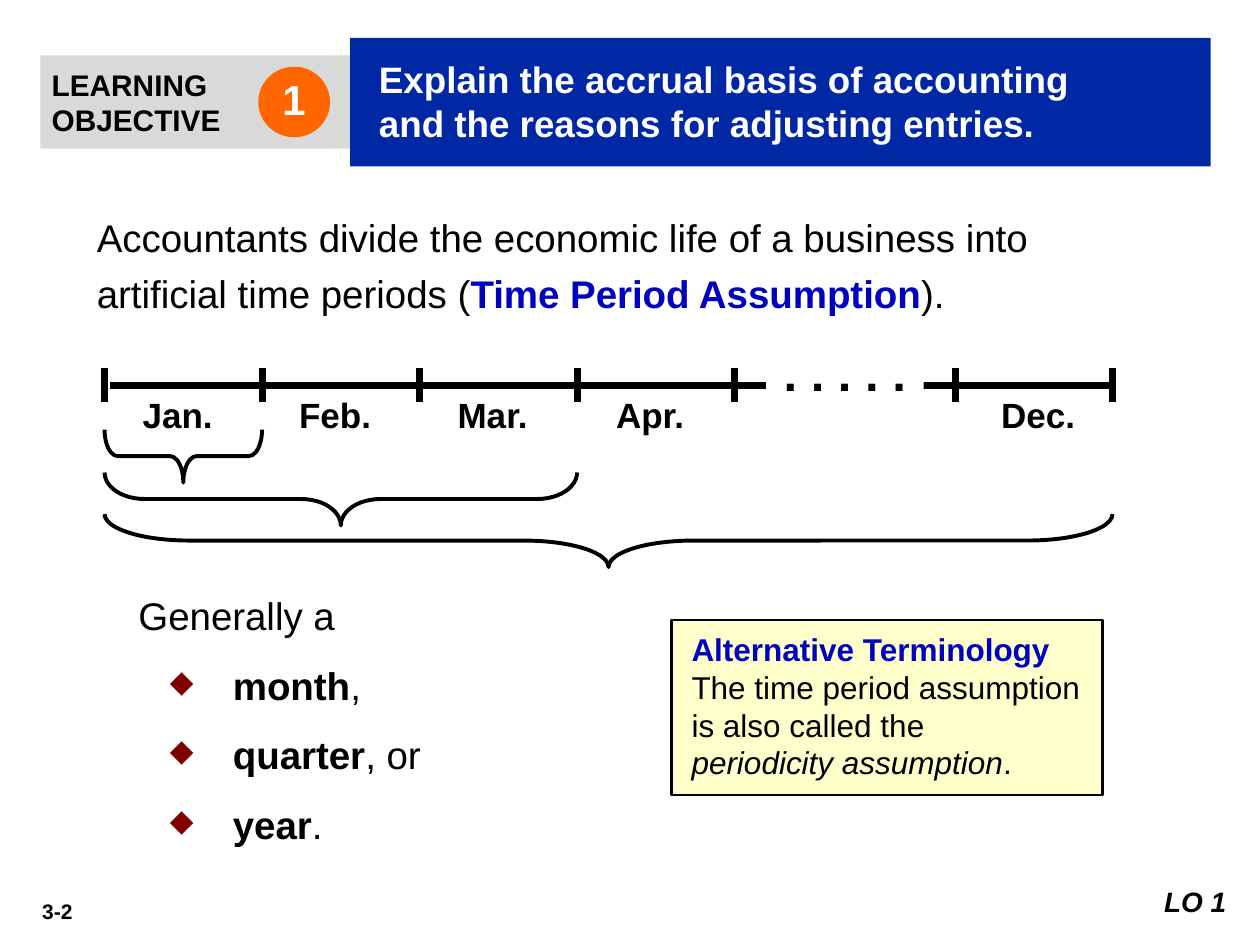
"""Build a slide on the time period assumption with a divided year timeline."""
from dataclasses import dataclass

from lxml import etree
from pptx import Presentation
from pptx.dml.color import RGBColor
from pptx.enum.shapes import MSO_CONNECTOR, MSO_SHAPE
from pptx.enum.text import MSO_ANCHOR, PP_ALIGN
from pptx.oxml.ns import qn
from pptx.util import Emu, Pt

RECT, OVAL, BRACE = MSO_SHAPE.RECTANGLE, MSO_SHAPE.OVAL, MSO_SHAPE.LEFT_BRACE
STRAIGHT = MSO_CONNECTOR.STRAIGHT
LEFT, CENTER, RIGHT = PP_ALIGN.LEFT, PP_ALIGN.CENTER, PP_ALIGN.RIGHT
TOP, MIDDLE = MSO_ANCHOR.TOP, MSO_ANCHOR.MIDDLE
EMU_PER_PX = 9144
BLACK, WHITE, BLUE = "000000", "FFFFFF", "0000BF"
START, MONTH = 83, 125


@dataclass(frozen=True)
class Span:
    text: str
    bold: bool = False
    italic: bool = False
    color: str = BLACK


@dataclass(frozen=True)
class Para:
    spans: tuple[Span, ...]
    bullet: bool = False


@dataclass(frozen=True)
class Style:
    size: int
    align: PP_ALIGN = LEFT
    anchor: MSO_ANCHOR = TOP
    wrap: bool = True
    line_spacing: float = 1.0
    gap: int = 0
    margin: int = 0
    insets: tuple[int, int, int, int] = (10, 5, 10, 5)


@dataclass(frozen=True)
class Box:
    left: int
    top: int
    width: int
    height: int
    paras: tuple[Para, ...]
    style: Style
    fill: str | None = None
    line: str | None = None
    shape: MSO_SHAPE = RECT


def px(length: float) -> Emu:
    return Emu(round(length * EMU_PER_PX))


def rgb(color: str) -> RGBColor:
    return RGBColor.from_string(color)


def plain(*lines: str, bold: bool = True, italic: bool = False, color: str = BLACK) -> tuple[Para, ...]:
    return tuple(Para((Span(line, bold, italic, color),)) for line in lines)


def add_bullet(para) -> None:
    properties = para._p.get_or_add_pPr()
    properties.set("marL", str(px(75)))
    properties.set("indent", str(px(-50)))
    color = etree.SubElement(properties, qn("a:buClr"))
    etree.SubElement(color, qn("a:srgbClr"), val="800000")
    etree.SubElement(properties, qn("a:buSzPct"), val="80000")
    etree.SubElement(properties, qn("a:buChar"), char="◆")


def write_text(frame, paras: tuple[Para, ...], style: Style) -> None:
    frame.word_wrap = style.wrap
    frame.vertical_anchor = style.anchor
    frame.margin_left, frame.margin_top, frame.margin_right, frame.margin_bottom = map(px, style.insets)
    for index, item in enumerate(paras):
        para = frame.add_paragraph() if index else frame.paragraphs[0]
        para.alignment = style.align
        para.line_spacing = style.line_spacing
        para.space_before = Pt(style.gap if index else 0)
        if style.margin:
            para._p.get_or_add_pPr().set("marL", str(px(style.margin)))
        if item.bullet:
            add_bullet(para)
        for part in item.spans:
            span = para.add_run()
            span.text = part.text
            font = span.font
            font.name, font.size = "Arial", Pt(style.size)
            font.bold, font.italic = part.bold, part.italic
            font.color.rgb = rgb(part.color)


def draw_box(page, box: Box) -> None:
    place = [px(value) for value in (box.left, box.top, box.width, box.height)]
    if box.fill is None:
        shape = page.shapes.add_textbox(*place)
    else:
        shape = page.shapes.add_shape(box.shape, *place)
        shape.shadow.inherit = False
        shape.fill.solid()
        shape.fill.fore_color.rgb = rgb(box.fill)
        if box.line is None:
            shape.line.fill.background()
        else:
            shape.line.color.rgb = rgb(box.line)
            shape.line.width = Pt(1.5)
    write_text(shape.text_frame, box.paras, box.style)


def draw_line(page, x1: int, y1: int, x2: int, y2: int) -> None:
    line = page.shapes.add_connector(STRAIGHT, px(x1), px(y1), px(x2), px(y2))
    line.line.color.rgb = rgb(BLACK)
    line.line.width = Pt(4)
    etree.SubElement(line._element.spPr, qn("a:effectLst"))


def draw_brace(page, top: int, span: int, depth: int = 42) -> None:
    left = START + (span - depth) / 2
    brace = page.shapes.add_shape(BRACE, px(left), px(top - (span - depth) / 2), px(depth), px(span))
    brace.rotation = 270
    brace.adjustments[0] = span / 500
    brace.shadow.inherit = False
    brace.fill.background()
    brace.line.color.rgb = rgb(BLACK)
    brace.line.width = Pt(2.25)


def draw_timeline(page) -> None:
    draw_line(page, 87, 306, 883, 306)
    draw_box(page, Box(608, 292, 125, 33, plain(". . . . ."),
                       Style(28, CENTER, MIDDLE, wrap=False, line_spacing=0.15), WHITE))
    for x in [START + MONTH * index for index in range(5)] + [758, 883]:
        draw_line(page, x, 292, x, 319)
    lefts = [99 + MONTH * index for index in range(4)] + [782]
    for left, month in zip(lefts, ("Jan.", "Feb.", "Mar.", "Apr.", "Dec.")):
        draw_box(page, Box(left, 307, 84, 43, plain(month), Style(20, CENTER)))
    for top, span in ((341, MONTH), (375, 3 * MONTH), (408, 800)):
        draw_brace(page, top, span)


def main() -> None:
    deck = Presentation()
    deck.slide_width, deck.slide_height = px(1000), px(750)
    page = deck.slides.add_slide(deck.slide_layouts[6])

    periods = (("month", ","), ("quarter", ", or"), ("year", "."))
    period_list = plain("Generally a", bold=False) + tuple(
        Para((Span(name, bold=True), Span(ending)), bullet=True) for name, ending in periods)
    statement = (Para((
        Span("Accountants divide the economic life of a business into artificial time periods ("),
        Span("Time Period Assumption", bold=True, color=BLUE), Span(")."))),)
    terminology = (
        plain("Alternative Terminology", color=BLUE)
        + plain("The time period assumption", "is also called the", bold=False)
        + (Para((Span("periodicity assumption", italic=True), Span("."))),))
    objective = plain("Explain the accrual basis of accounting",
                      "and the reasons for adjusting entries.", color=WHITE)
    body = Style(22, line_spacing=1.2, gap=8)

    draw_box(page, Box(8, 708, 75, 30, plain("3-2"), Style(12, CENTER)))
    draw_box(page, Box(100, 458, 408, 217, period_list, body))
    draw_box(page, Box(67, 158, 850, 99, statement, body))
    draw_timeline(page)
    for box in (
        Box(533, 492, 342, 139, terminology,
            Style(18, margin=6, insets=(10, 8, 10, 10)), "FFFFCC", BLACK),
        Box(32, 44, 246, 74, plain("LEARNING", "OBJECTIVE"),
            Style(17, anchor=MIDDLE, wrap=False, insets=(9, 5, 9, 5)), "D9D9D9"),
        Box(278, 30, 683, 102, objective,
            Style(21, anchor=MIDDLE, margin=13, insets=(10, 3, 10, 5)), "0027A4"),
        Box(205, 53, 57, 56, plain("1", color=WHITE),
            Style(24, CENTER, MIDDLE, insets=(9, 0, 9, 5)), "FF6600", shape=OVAL),
        Box(883, 697, 100, 37, plain("LO 1", italic=True), Style(16, RIGHT), WHITE),
    ):
        draw_box(page, box)
    deck.save("out.pptx")


if __name__ == "__main__":
    main()
